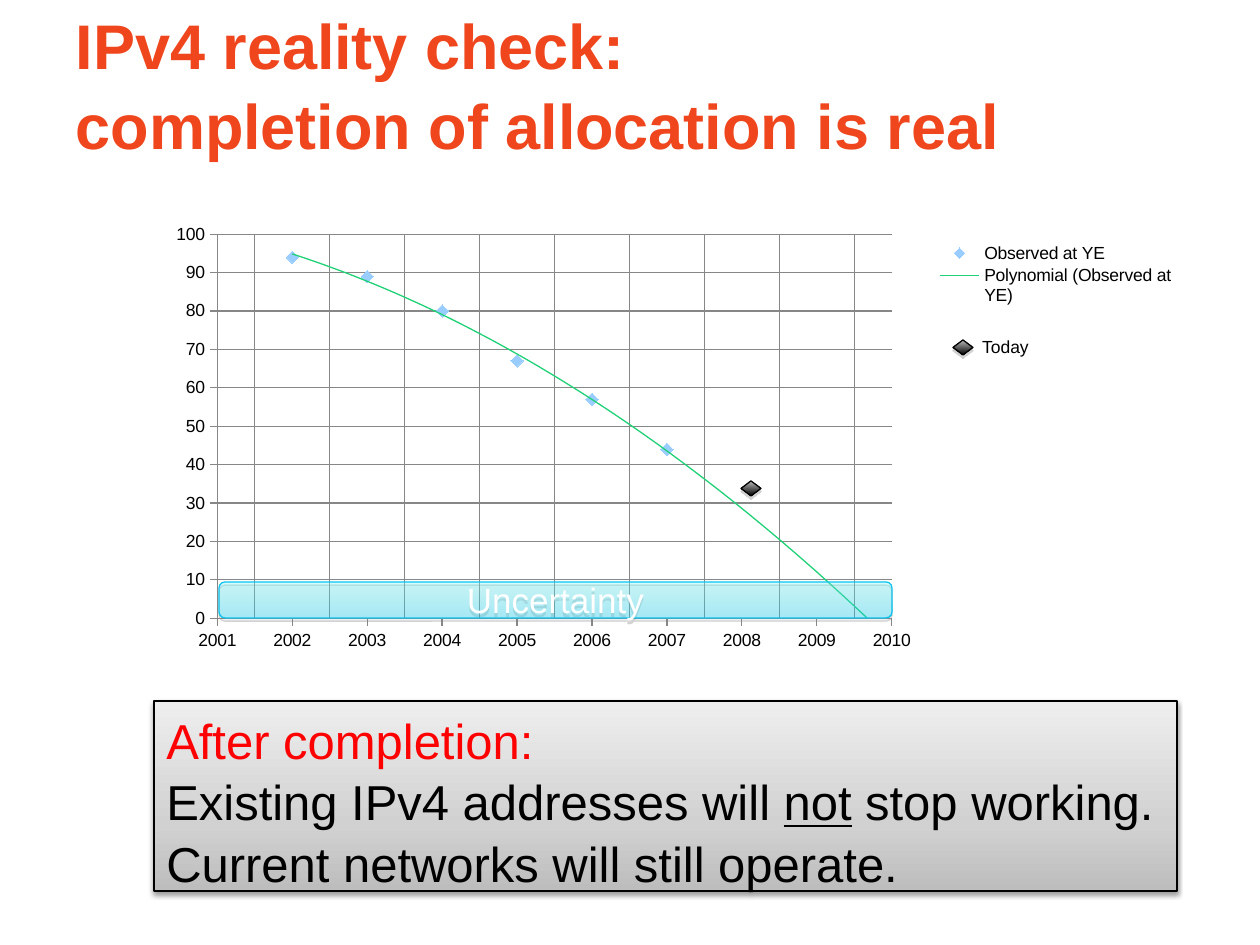
import copy
from dataclasses import dataclass

import lxml.etree
import pptx
import pptx.chart.data
import pptx.dml.color
import pptx.enum.chart
import pptx.enum.shapes
import pptx.enum.text
import pptx.oxml
import pptx.oxml.ns
import pptx.util


@dataclass(frozen=True)
class Theme:
    font: str = "Arial"
    title: str = "EF461D"
    alert: str = "FF0000"
    ink: str = "000000"
    white: str = "FFFFFF"
    grid: str = "878787"
    marker: str = "99CCFF"
    trend: str = "20D177"
    band_line: str = "0FC3ED"
    title_size: int = 36
    note_size: int = 28
    band_size: int = 20
    chart_size: int = 10


T = Theme()
RGB = pptx.dml.color.RGBColor.from_string
SHAPE = pptx.enum.shapes.MSO_SHAPE
ANCHOR = pptx.enum.text.MSO_ANCHOR
ALIGN = pptx.enum.text.PP_ALIGN
NS = pptx.oxml.ns.nsdecls("a", "c")


def px(*lengths):
    return [pptx.util.Emu(round(v * 914400 / 126)) for v in lengths]


def add_text(p, text, size=T.note_size, color=T.ink, bold=False, underline=False):
    for i, line in enumerate(text.split("\n")):
        if i:
            p.add_line_break()
            p._p[-1].append(copy.deepcopy(r._r.rPr))
        if not line:
            continue
        r = p.add_run()
        r.text = line
        r.font.name = T.font
        r.font.size = pptx.util.Pt(size)
        r.font.bold = bold
        r.font.underline = underline
        r.font.color.rgb = RGB(color)


prs = pptx.Presentation()
prs.slide_width, prs.slide_height = px(1260, 945)
s = prs.slides.add_slide(prs.slide_layouts[5])

title = s.shapes.title
title.left, title.top, title.width, title.height = px(63, 4, 1134, 158)
tf = title.text_frame
tf.word_wrap = True
tf.auto_size = pptx.enum.text.MSO_AUTO_SIZE.NONE
tf.vertical_anchor = ANCHOR.BOTTOM
tf.margin_bottom = 0
p = tf.paragraphs[0]
p.alignment = ALIGN.LEFT
p.line_spacing = 1.05
add_text(p, "IPv4 reality check:\ncompletion of allocation is real",
         size=T.title_size, color=T.title, bold=True)

data = pptx.chart.data.XyChartData()
observed = data.add_series("Observed at YE")
for year, value in enumerate([94, 89, 80, 67, 57, 44], 2002):
    observed.add_data_point(year, value)
chart = s.shapes.add_chart(
    pptx.enum.chart.XL_CHART_TYPE.XY_SCATTER, *px(149, 202, 1036, 556), data).chart
chart.has_title = False
chart.font.name = T.font
chart.font.size = pptx.util.Pt(T.chart_size)
chart.font.color.rgb = RGB(T.ink)
chart.has_legend = True
chart.legend.position = pptx.enum.chart.XL_LEGEND_POSITION.RIGHT
chart.legend.include_in_layout = False
chart.plots[0].vary_by_categories = False

x_axis, y_axis = chart.category_axis, chart.value_axis
x_axis.has_major_gridlines = False
x_axis.has_minor_gridlines = True
x_axis.minor_unit = 0.5
y_axis.has_major_gridlines = True
for axis, low, high, step in ((x_axis, 2001, 2010, 1), (y_axis, 0, 100, 10)):
    axis.minimum_scale, axis.maximum_scale, axis.major_unit = low, high, step
    axis.major_tick_mark = pptx.enum.chart.XL_TICK_MARK.OUTSIDE
    axis.minor_tick_mark = pptx.enum.chart.XL_TICK_MARK.NONE
    axis.tick_labels.number_format = "0"
    axis.tick_labels.number_format_is_linked = False
for line in (x_axis.format.line, y_axis.format.line, y_axis.major_gridlines.format.line):
    line.color.rgb = RGB(T.grid)
    line.width = pptx.util.Pt(0.75)
x_axis._element.find(pptx.oxml.ns.qn("c:minorGridlines")).append(pptx.oxml.parse_xml(
    f'<c:spPr {NS}><a:ln w="9525"><a:solidFill><a:srgbClr val="{T.grid}"/></a:solidFill></a:ln></c:spPr>'))

ser = chart.plots[0].series[0]
ser._element.get_or_add_smooth().val = False
ser.format.line.fill.background()
ser.marker.style = pptx.enum.chart.XL_MARKER_STYLE.DIAMOND
ser.marker.size = 7
ser.marker.format.fill.solid()
ser.marker.format.fill.fore_color.rgb = RGB(T.marker)
ser.marker.format.line.fill.background()
ser._element.find(pptx.oxml.ns.qn("c:xVal")).addprevious(pptx.oxml.parse_xml(
    f'<c:trendline {NS}><c:name>Polynomial (Observed at YE)</c:name>'
    f'<c:spPr><a:ln w="9525"><a:solidFill><a:srgbClr val="{T.trend}"/></a:solidFill></a:ln></c:spPr>'
    '<c:trendlineType val="poly"/><c:order val="2"/><c:forward val="3"/>'
    '<c:dispRSqr val="0"/><c:dispEq val="0"/></c:trendline>'))

plot_area = chart._chartSpace.chart.plotArea
legend = chart.legend._element
for parent, index, target, (x, y, w, h) in (
        (plot_area, 0, '<c:layoutTarget val="inner"/>', (0.066, 0.058, 0.651, 0.691)),
        (legend, 1, "", (0.755, 0.07, 0.24, 0.12))):
    for old in parent.findall(pptx.oxml.ns.qn("c:layout")):
        parent.remove(old)
    parent.insert(index, pptx.oxml.parse_xml(
        f'<c:layout {NS}><c:manualLayout>{target}<c:xMode val="edge"/><c:yMode val="edge"/>'
        f'<c:x val="{x}"/><c:y val="{y}"/><c:w val="{w}"/><c:h val="{h}"/>'
        '</c:manualLayout></c:layout>'))

key = s.shapes.add_group_shape()
DIAMOND_STOPS = [(0, "BCBCBC", 100), (100, "000000", 100)]
BAND_STOPS = [(0, "74FFFF", 31), (100, "00D8FF", 31)]
NOTE_STOPS = [(0, "BDBDBD", 100), (35, "D1D1D1", 100), (100, "EEEEEE", 100)]
SOFT = ("808080", 35, 0, 1.8)
DEEP = ("000000", 38, 3.1, 1.6)
drawn = []
for shapes, kind, box, stops, angle, edge, shadow in (
        (s.shapes, SHAPE.ROUNDED_RECTANGLE, (219, 582, 673, 36), BAND_STOPS, 90, T.band_line, SOFT),
        (s.shapes, SHAPE.DIAMOND, (741, 481, 20, 15), DIAMOND_STOPS, 90, T.ink, SOFT),
        (key.shapes, SHAPE.DIAMOND, (953, 340, 20, 15), DIAMOND_STOPS, 90, T.ink, SOFT),
        (s.shapes, SHAPE.RECTANGLE, (154, 701, 1023, 190), NOTE_STOPS, 270, T.ink, DEEP)):
    sp = shapes.add_shape(kind, *px(*box))
    sp.shadow.inherit = False
    sp.line.color.rgb = RGB(edge)
    sp.line.width = pptx.util.Pt(0.75)
    stop_xml = "".join(
        f'<a:gs pos="{pos * 1000}"><a:srgbClr val="{color}"><a:alpha val="{alpha * 1000}"/></a:srgbClr></a:gs>'
        for pos, color, alpha in stops)
    sp.line._ln.addprevious(pptx.oxml.parse_xml(
        f'<a:gradFill {NS} rotWithShape="1"><a:gsLst>{stop_xml}</a:gsLst>'
        f'<a:lin ang="{angle * 60000}" scaled="0"/></a:gradFill>'))
    color, alpha, blur, dist = shadow
    sp._element.spPr.find(pptx.oxml.ns.qn("a:effectLst")).append(pptx.oxml.parse_xml(
        f'<a:outerShdw {NS} blurRad="{round(blur * 12700)}" dist="{round(dist * 12700)}" dir="5400000" '
        f'rotWithShape="0"><a:srgbClr val="{color}"><a:alpha val="{alpha * 1000}"/></a:srgbClr></a:outerShdw>'))
    drawn.append(sp)
band, today, key_mark, note = drawn

tf = band.text_frame
tf.vertical_anchor = ANCHOR.MIDDLE
tf.paragraphs[0].alignment = ALIGN.CENTER
add_text(tf.paragraphs[0], "Uncertainty", size=T.band_size, color=T.white)

tf = key.shapes.add_textbox(*px(969, 330, 73, 34)).text_frame
tf.word_wrap = False
tf.paragraphs[0].alignment = ALIGN.CENTER
add_text(tf.paragraphs[0], "Today", size=T.chart_size)

tf = note.text_frame
tf.word_wrap = True
tf.vertical_anchor = ANCHOR.TOP
p = tf.paragraphs[0]
add_text(p, "After completion:\n", color=T.alert)
add_text(p, "Existing IPv4 addresses will ")
add_text(p, "not", underline=True)
add_text(p, " stop working.")
add_text(tf.add_paragraph(), "Current networks will still operate.")
for p in tf.paragraphs:
    p.alignment = ALIGN.LEFT
    p.line_spacing = 1.05

prs.save("out.pptx")
